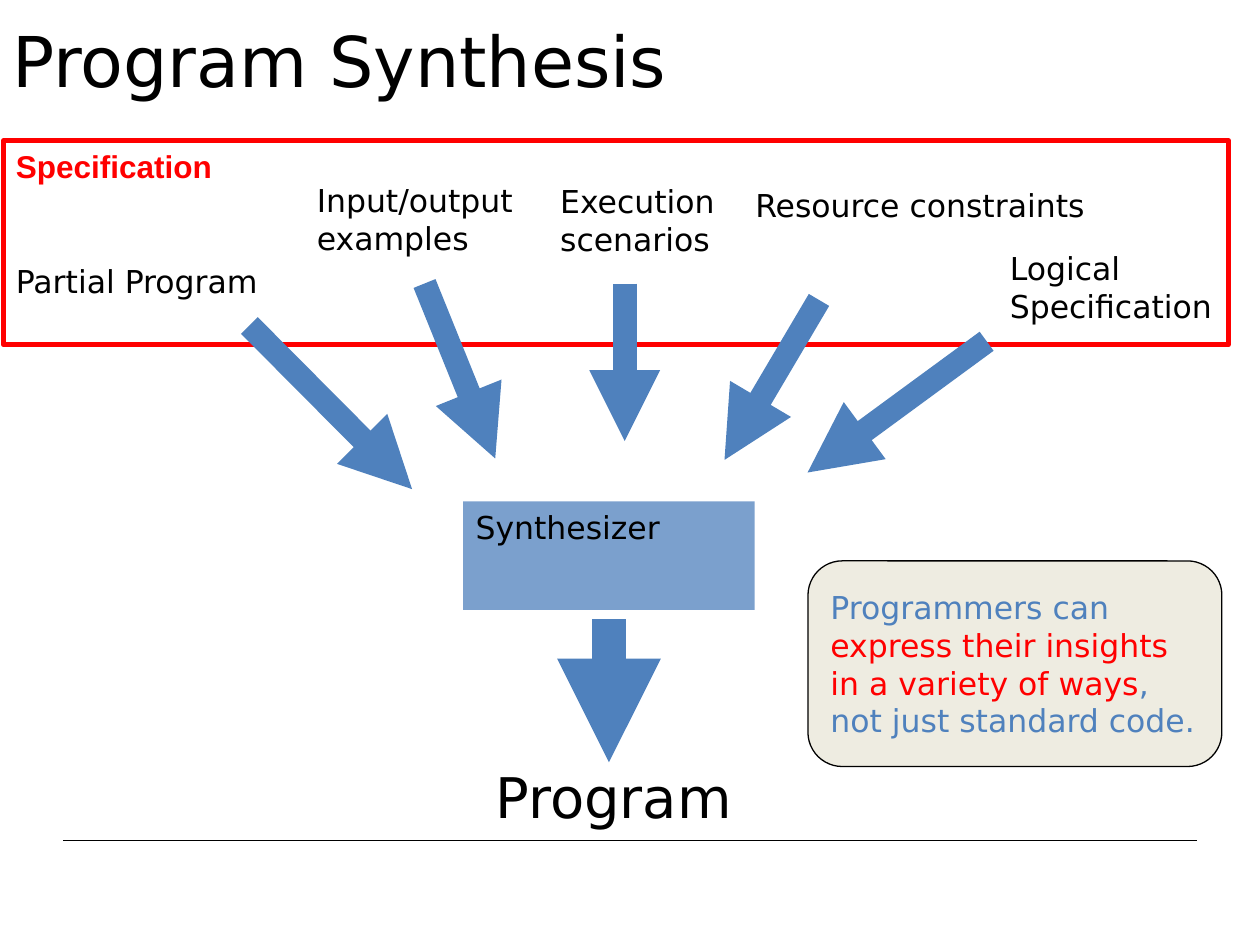
import dataclasses
import typing

import pptx
import pptx.dml.color
import pptx.enum.shapes
import pptx.enum.text
import pptx.oxml.ns
import pptx.util

Pt = pptx.util.Pt
MSO_SHAPE = pptx.enum.shapes.MSO_SHAPE
ANCHOR = pptx.enum.text.MSO_ANCHOR
LEFT = pptx.enum.text.PP_ALIGN.LEFT
qn = pptx.oxml.ns.qn


@dataclasses.dataclass(frozen=True)
class Theme:
    black: str = "000000"
    red: str = "FF0000"
    blue: str = "4F81BD"
    cream: str = "EEECE1"
    font: str = "DejaVu Sans"
    label_font: str = "Arial"
    title: float = 40
    result: float = 32
    body: float = 18


THEME = Theme()


class Run(typing.NamedTuple):
    text: str
    color: str = THEME.black
    size: float = THEME.body
    font: str = THEME.font
    bold: bool = False


Paragraphs = list[list[Run]]


class Bounds(typing.NamedTuple):
    left: float
    top: float
    width: float
    height: float


class Label(typing.NamedTuple):
    bounds: Bounds
    paragraphs: Paragraphs
    anchor: typing.Any = ANCHOR.TOP


class Box(typing.NamedTuple):
    kind: typing.Any
    bounds: Bounds
    paragraphs: Paragraphs
    fill: str | None = None
    opacity: int = 100
    line: str | None = None
    weight: float = 0
    anchor: typing.Any = ANCHOR.TOP


class Line(typing.NamedTuple):
    x1: float
    y1: float
    x2: float
    y2: float
    weight: float = 13.5
    color: str = THEME.blue
    arrow: bool = True


def rgb(value: str) -> pptx.dml.color.RGBColor:
    return pptx.dml.color.RGBColor.from_string(value)


def apply(target: typing.Any, values: dict[str, typing.Any]) -> None:
    for name, value in values.items():
        setattr(target, name, value)


def write(sp: typing.Any, paragraphs: Paragraphs, anchor: typing.Any) -> None:
    tf = sp.text_frame
    apply(tf, {"word_wrap": True, "vertical_anchor": anchor})
    for i, runs in enumerate(paragraphs):
        p = tf.add_paragraph() if i else tf.paragraphs[0]
        p.alignment = LEFT
        for run in runs:
            r = p.add_run()
            r.text = run.text
            apply(r.font, {"name": run.font, "size": Pt(run.size), "bold": run.bold})
            r.font.color.rgb = rgb(run.color)


def draw_label(s: typing.Any, label: Label) -> None:
    sp = s.shapes.add_textbox(*map(Pt, label.bounds))
    write(sp, label.paragraphs, label.anchor)


def draw_box(s: typing.Any, box: Box) -> None:
    sp = s.shapes.add_shape(box.kind, *map(Pt, box.bounds))
    sp.shadow.inherit = False
    if box.fill:
        sp.fill.solid()
        sp.fill.fore_color.rgb = rgb(box.fill)
        if box.opacity < 100:
            color = sp.fill._xPr.find(qn("a:solidFill"))[0]
            alpha = color.makeelement(qn("a:alpha"), {"val": str(box.opacity * 1000)})
            color.append(alpha)
    else:
        sp.fill.background()
    if box.line:
        sp.line.color.rgb = rgb(box.line)
        sp.line.width = Pt(box.weight)
    else:
        sp.line.fill.background()
    write(sp, box.paragraphs, box.anchor)


def draw_line(s: typing.Any, line: Line) -> None:
    straight = pptx.enum.shapes.MSO_CONNECTOR.STRAIGHT
    sp = s.shapes.add_connector(straight, *map(Pt, line[:4]))
    sp.line.color.rgb = rgb(line.color)
    sp.line.width = Pt(line.weight)
    if line.arrow:
        ln = sp.line._get_or_add_ln()
        ln.append(ln.makeelement(qn("a:tailEnd"), {"type": "triangle"}))
    props = sp._element.spPr
    props.append(props.makeelement(qn("a:effectLst"), {}))


BOXES = [
    Box(MSO_SHAPE.RECTANGLE, Bounds(2, 80.5, 700, 116.5),
        [[Run("Specification", THEME.red, font=THEME.label_font, bold=True)]],
        line=THEME.red, weight=3),
    Box(MSO_SHAPE.RECTANGLE, Bounds(264.7, 286.5, 166.5, 62), [[Run("Synthesizer")]],
        fill=THEME.blue, opacity=75),
    Box(MSO_SHAPE.ROUNDED_RECTANGLE, Bounds(461.7, 320.5, 236.5, 117.5),
        [[Run("Programmers can ", THEME.blue),
          Run("express their insights in a variety of ways", THEME.red),
          Run(", not just standard code.", THEME.blue)]],
        fill=THEME.cream, line=THEME.black, weight=0.75, anchor=ANCHOR.MIDDLE),
]

LABELS = [
    Label(Bounds(0, 0, 648, 67.5), [[Run("Program Synthesis", size=THEME.title)]],
          ANCHOR.MIDDLE),
    Label(Bounds(2, 146, 204, 29), [[Run("Partial Program")]]),
    Label(Bounds(174, 100, 177, 51), [[Run("Input/output examples")]]),
    Label(Bounds(313, 100.5, 112, 51), [[Run("Execution")], [Run("scenarios")]]),
    Label(Bounds(424.5, 103, 204, 29), [[Run("Resource constraints")]]),
    Label(Bounds(570, 139, 150, 51), [[Run("Logical")], [Run("Specification")]]),
    Label(Bounds(276, 432, 169, 46), [[Run("Program", size=THEME.result)]]),
]

LINES = [
    Line(36, 480, 684, 480, weight=0.5, color=THEME.black, arrow=False),
    Line(348, 354, 348, 435.6, weight=19.75),
    Line(142.5, 186, 235.5, 279.5),
    Line(242.6, 162, 283, 262),
    Line(357, 162, 357, 252),
    Line(468, 171.4, 414, 262.8),
    Line(563.8, 195, 461.5, 270),
]


def main() -> None:
    prs = pptx.Presentation()
    apply(prs, {"slide_width": Pt(720), "slide_height": Pt(540)})
    s = prs.slides.add_slide(prs.slide_layouts[6])
    for box in BOXES:
        draw_box(s, box)
    for label in LABELS:
        draw_label(s, label)
    for line in LINES:
        draw_line(s, line)
    prs.save("out.pptx")


if __name__ == "__main__":
    main()
